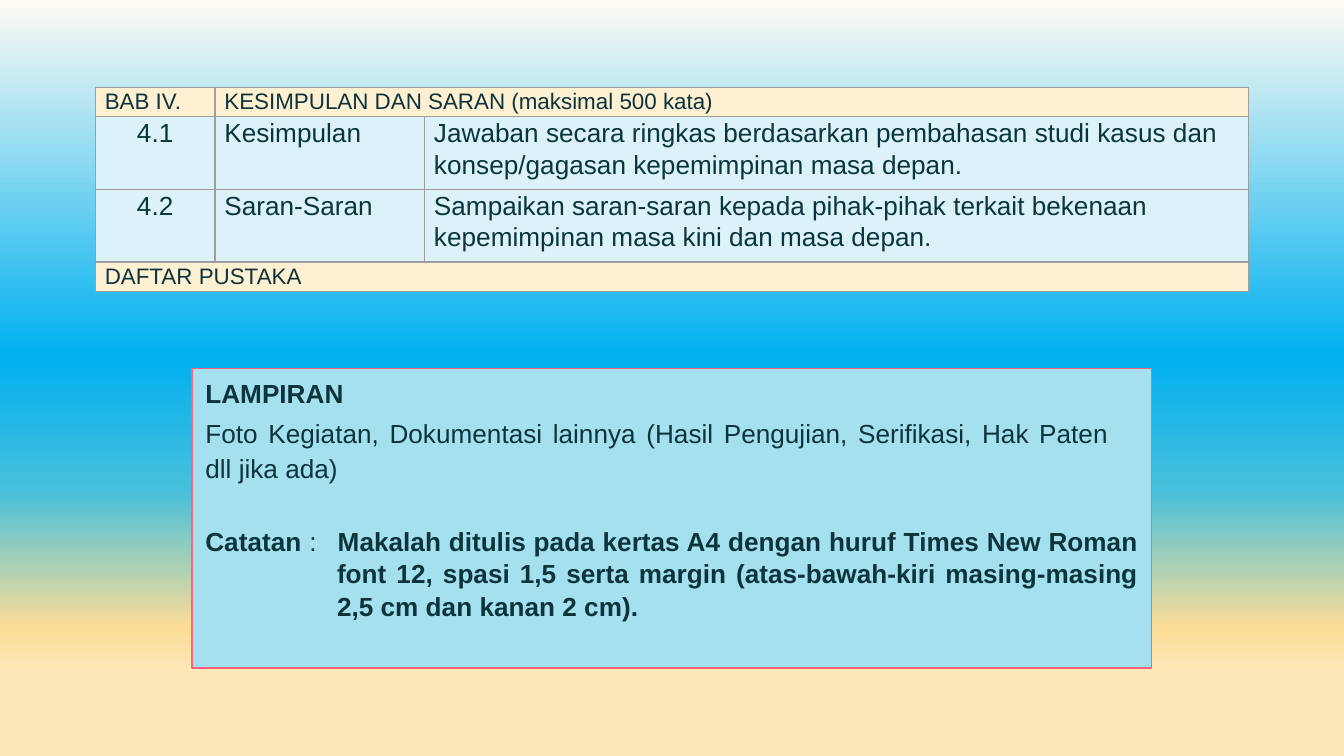
from lxml import etree
from pptx import Presentation
from pptx.dml.color import RGBColor
from pptx.enum.shapes import MSO_SHAPE
from pptx.enum.text import MSO_ANCHOR, PP_ALIGN
from pptx.oxml.ns import qn
from pptx.util import Inches, Pt

RECTANGLE = MSO_SHAPE.RECTANGLE
TOP = MSO_ANCHOR.TOP
LEFT, CENTER, JUSTIFY = PP_ALIGN.LEFT, PP_ALIGN.CENTER, PP_ALIGN.JUSTIFY

FONT = "Arial"
INK = RGBColor(0x0C, 0x34, 0x3D)
CREAM = RGBColor(0xFE, 0xF0, 0xD1)
PALE_BLUE = RGBColor(0xDA, 0xF2, 0xF8)
BOX_BLUE = RGBColor(0xA4, 0xE0, 0xED)
PINK = RGBColor(0xFE, 0x61, 0x7F)
GREY = RGBColor(0x9E, 0x9E, 0x9E)
SKY = [
    (0, RGBColor(0xFF, 0xFB, 0xF3)),
    (47, RGBColor(0x00, 0xB0, 0xF0)),
    (65, RGBColor(0x48, 0xC0, 0xDB)),
    (83, RGBColor(0xFC, 0xDD, 0x97)),
    (89, RGBColor(0xFD, 0xE8, 0xB9)),
]

COLUMNS = [0.89, 1.56, 6.13]
ROWS = [
    (0.22, ["BAB IV.", "KESIMPULAN DAN SARAN (maksimal 500 kata)"]),
    (0.54, ["4.1", "Kesimpulan",
            "Jawaban secara ringkas berdasarkan pembahasan studi kasus dan "
            "konsep/gagasan kepemimpinan masa depan."]),
    (0.54, ["4.2", "Saran-Saran",
            "Sampaikan saran-saran kepada pihak-pihak terkait bekenaan "
            "kepemimpinan masa kini dan masa depan."]),
    (0.22, ["DAFTAR PUSTAKA"]),
]


def add_color(parent, color):
    fill = etree.SubElement(parent, qn("a:solidFill"))
    etree.SubElement(fill, qn("a:srgbClr"), val=str(color))


def set_background(s, stops):
    fill = s.background.fill
    fill.gradient()
    fill.gradient_angle = 270
    stop_list = s.element.find(".//" + qn("a:gsLst"))
    for stop in list(stop_list):
        stop_list.remove(stop)
    for percent, color in stops:
        stop = etree.SubElement(stop_list, qn("a:gs"), pos=str(percent * 1000))
        etree.SubElement(stop, qn("a:srgbClr"), val=str(color))


def format_paragraph(p, align, line_spacing, space_after):
    p.alignment = align
    p.line_spacing = line_spacing
    p.space_before = Pt(0)
    p.space_after = Pt(space_after)


def set_indents(p, left=0, first=0, right=0):
    p_pr = p._p.get_or_add_pPr()
    for name, value in (("marL", left), ("indent", first), ("marR", right)):
        p_pr.set(name, str(Inches(value)))


def add_run(p, text, size=14, bold=False):
    r = p.add_run()
    r.text = text
    r.font.name = FONT
    r.font.size = Pt(size)
    r.font.bold = bold
    r.font.color.rgb = INK


def set_borders(cell):
    tc_pr = cell._tc.get_or_add_tcPr()
    for i, side in enumerate(("a:lnL", "a:lnR", "a:lnT", "a:lnB")):
        line = etree.Element(qn(side), w=str(Pt(0.75)))
        add_color(line, GREY)
        tc_pr.insert(i, line)


def format_cell(cell, fill):
    cell.margin_left = cell.margin_right = Inches(0.07)
    cell.margin_top = cell.margin_bottom = 0
    cell.vertical_anchor = TOP
    cell.fill.solid()
    cell.fill.fore_color.rgb = fill
    set_borders(cell)


def add_outline_table(s):
    last = len(COLUMNS) - 1
    table = s.shapes.add_table(len(ROWS), len(COLUMNS), Inches(0.71), Inches(0.65),
                               Inches(8.58), Inches(1.53)).table
    table.first_row = table.horz_banding = False
    for column, width in zip(table.columns, COLUMNS):
        column.width = Inches(width)
    for i, (height, texts) in enumerate(ROWS):
        table.rows[i].height = Inches(height)
        is_heading = len(texts) <= last
        for cell in table.rows[i].cells:
            format_cell(cell, CREAM if is_heading else PALE_BLUE)
        if is_heading:
            table.cell(i, len(texts) - 1).merge(table.cell(i, last))
        for j, text in enumerate(texts):
            p = table.cell(i, j).text_frame.paragraphs[0]
            align = CENTER if j == 0 and not is_heading else LEFT
            format_paragraph(p, align, 1.07, 1.4)
            add_run(p, text, size=12 if is_heading else 14)


def add_attachment_box(s):
    sp = s.shapes.add_shape(RECTANGLE, Inches(1.43), Inches(2.74),
                            Inches(7.14), Inches(2.23))
    sp.shadow.inherit = False
    sp.fill.solid()
    sp.fill.fore_color.rgb = BOX_BLUE
    sp.line.color.rgb = PINK
    sp.line.width = Pt(0.75)
    tf = sp.text_frame
    tf.word_wrap = True
    tf.vertical_anchor = TOP

    p = tf.paragraphs[0]
    format_paragraph(p, JUSTIFY, 1.07, 3.2)
    add_run(p, "LAMPIRAN", bold=True)

    p = tf.add_paragraph()
    format_paragraph(p, JUSTIFY, 1.11, 21.8)
    set_indents(p, right=0.22)
    add_run(p, "Foto Kegiatan, Dokumentasi lainnya (Hasil Pengujian, Serifikasi, "
               "Hak Paten dll jika ada)")

    p = tf.add_paragraph()
    format_paragraph(p, JUSTIFY, 1.03, 2.6)
    set_indents(p, left=0.98, first=-0.98)
    add_run(p, "Catatan", bold=True)
    add_run(p, " :\t")
    add_run(p, "Makalah ditulis pada kertas A4 dengan huruf Times New Roman font 12, "
               "spasi 1,5 serta margin (atas-bawah-kiri masing-masing 2,5 cm dan "
               "kanan 2 cm).", bold=True)


def main():
    prs = Presentation()
    prs.slide_width = Inches(10)
    prs.slide_height = prs.slide_width * 9 // 16
    s = prs.slides.add_slide(prs.slide_layouts[6])
    set_background(s, SKY)
    add_outline_table(s)
    add_attachment_box(s)
    prs.save("out.pptx")


if __name__ == "__main__":
    main()
